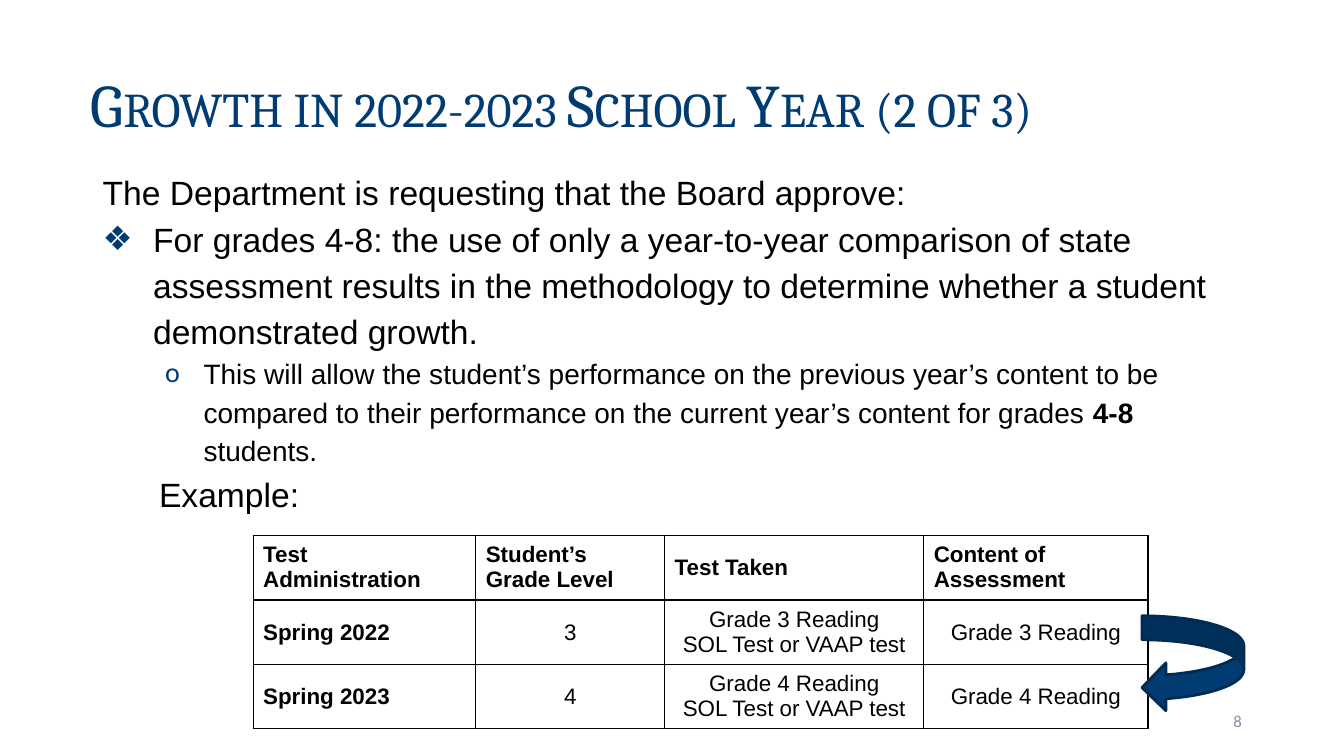
"""Build the slide on growth in the 2022-2023 school year."""
from lxml import etree
from pptx import Presentation
from pptx import util as u
from pptx.dml import color
from pptx.enum import shapes, text
from pptx.oxml import ns

NAVY, DARK, GREY, BLACK = "003C71", "002C54", "888FA3", "000000"
LEFT, MID, RIGHT = text.PP_ALIGN.LEFT, text.PP_ALIGN.CENTER, text.PP_ALIGN.RIGHT

TITLE = "Growth in 2022-2023 School Year (2 of 3)"
BODY = [
    {"runs": ["The Department is requesting that the Board approve:"], "size": 24},
    {"runs": ["For grades 4-8: the use of only a year-to-year comparison of state "
              "assessment results in the methodology to determine whether a "
              "student demonstrated growth."],
     "size": 24, "left": 1.27, "hang": -1.27, "mark": "❖", "face": "Arial"},
    {"runs": ["This will allow the student’s performance on the previous year’s "
              "content to be compared to their performance on the current year’s "
              "content for grades ", "4-8", " students."],
     "size": 20, "left": 2.54, "hang": -0.97, "mark": "o", "face": "Calibri", "level": 1},
    {"runs": ["Example:"], "size": 24, "left": 1.42},
]
ROWS = [
    ["Test Administration", "Student’s Grade Level", "Test Taken", "Content of Assessment"],
    ["Spring 2022", "3", "Grade 3 Reading\nSOL Test or VAAP test", "Grade 3 Reading"],
    ["Spring 2023", "4", "Grade 4 Reading\nSOL Test or VAAP test", "Grade 4 Reading"],
]
WIDTHS = [5.61, 4.76, 6.53, 5.65]
HEIGHTS = [1.63, 1.63, 1.52]
BOXES = {
    "title": (0, 0, 33.87, 3.68),
    "body": (2.34, 4.06, 29.21, 14.1),
    "number": (23.93, 17.65, 7.62, 1.02),
    "table": (6.38, 13.49, sum(WIDTHS), sum(HEIGHTS)),
    "arrow": (28.78, 15.52, 2.57, 2.41),
}


def rgb(tone):
    return color.RGBColor.from_string(tone)


def box(name):
    return [u.Cm(n) for n in BOXES[name]]


def put(item, **vals):
    for key, val in vals.items():
        setattr(item, key, val)


def write(para, words, size, face, tone, bold=False):
    run = para.add_run()
    run.text = words
    put(run.font, size=u.Pt(size), name=face, bold=bold)
    run.font.color.rgb = rgb(tone)
    return run


def tint(home, tag, tone):
    part = etree.SubElement(home, ns.qn(tag))
    etree.SubElement(part, ns.qn("a:srgbClr"), val=tone)


def mark(para, sign, face):
    props = para._p.get_or_add_pPr()
    tint(props, "a:buClr", NAVY)
    etree.SubElement(props, ns.qn("a:buFont"), typeface=face)
    etree.SubElement(props, ns.qn("a:buChar"), char=sign)


def head(slide):
    title = slide.shapes.title
    put(title, **dict(zip(("left", "top", "width", "height"), box("title"))))
    frame = title.text_frame
    put(frame, auto_size=text.MSO_AUTO_SIZE.NONE, word_wrap=True,
        vertical_anchor=text.MSO_ANCHOR.BOTTOM, margin_left=u.Cm(2.29))
    para = frame.paragraphs[0]
    put(para, alignment=LEFT, line_spacing=0.9, space_before=u.Pt(0))
    run = write(para, TITLE, 43.2, "Cambria", NAVY)
    run.font._element.set("cap", "small")


def body(slide):
    frame = slide.shapes.add_textbox(*box("body")).text_frame
    frame.word_wrap = True
    for num, item in enumerate(BODY):
        para = frame.add_paragraph() if num else frame.paragraphs[0]
        put(para, line_spacing=1.15, level=item.get("level", 0))
        props = para._p.get_or_add_pPr()
        props.set("marL", str(u.Cm(item.get("left", 0))))
        props.set("indent", str(u.Cm(item.get("hang", 0))))
        if "mark" in item:
            mark(para, item["mark"], item["face"])
        for spot, words in enumerate(item["runs"]):
            write(para, words, item["size"], "Arial", BLACK, spot == 1)


def edge(cell):
    props = cell._tc.get_or_add_tcPr()
    for side in "LRTB":
        line = etree.SubElement(props, ns.qn("a:ln" + side), w=str(u.Pt(1)))
        tint(line, "a:solidFill", BLACK)


def grid(slide):
    table = slide.shapes.add_table(len(ROWS), len(WIDTHS), *box("table")).table
    put(table, first_row=False, horz_banding=False)
    for col, wide in zip(table.columns, WIDTHS):
        col.width = u.Cm(wide)
    for r, (row, high) in enumerate(zip(ROWS, HEIGHTS)):
        table.rows[r].height = u.Cm(high)
        for c, words in enumerate(row):
            cell = table.cell(r, c)
            label = r == 0 or c == 0
            edge(cell)
            cell.fill.background()
            cell.vertical_anchor = text.MSO_ANCHOR.MIDDLE
            for num, line in enumerate(words.split("\n")):
                frame = cell.text_frame
                para = frame.add_paragraph() if num else frame.paragraphs[0]
                para.alignment = LEFT if label else MID
                write(para, line, 16, "Arial", BLACK, label)


def number(slide):
    frame = slide.shapes.add_textbox(*box("number")).text_frame
    put(frame, word_wrap=True, vertical_anchor=text.MSO_ANCHOR.MIDDLE)
    para = frame.paragraphs[0]
    para.alignment = RIGHT
    write(para, "8", 12, "Calibri", GREY)


def arrow(slide):
    shape = slide.shapes.add_shape(shapes.MSO_SHAPE.CURVED_LEFT_ARROW, *box("arrow"))
    shape.shadow.inherit = False
    shape.fill.solid()
    shape.fill.fore_color.rgb = rgb(NAVY)
    shape.line.color.rgb = rgb(DARK)
    shape.line.width = u.Pt(2)


def main():
    deck = Presentation()
    put(deck, slide_width=u.Cm(33.87), slide_height=u.Cm(19.05))
    slide = deck.slides.add_slide(deck.slide_layouts[5])
    for draw in (head, body, number, grid, arrow):
        draw(slide)
    deck.save("out.pptx")


if __name__ == "__main__":
    main()
